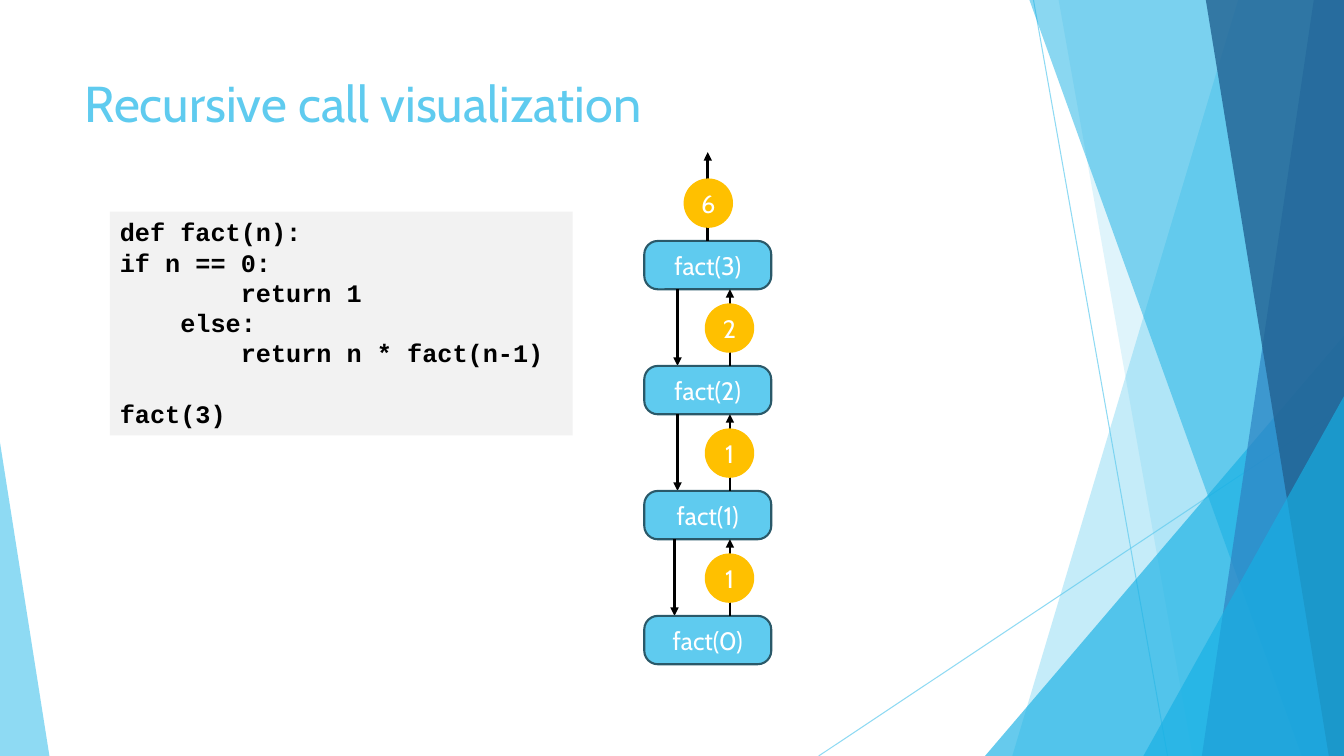
from dataclasses import dataclass

from lxml.etree import SubElement
from pptx import Presentation
from pptx.dml.color import RGBColor
from pptx.enum.shapes import MSO_CONNECTOR, MSO_SHAPE
from pptx.enum.text import MSO_ANCHOR, PP_ALIGN
from pptx.oxml.ns import qn
from pptx.util import Inches, Pt

WIDTH, HEIGHT = 13.33, 7.5
SKY, CYAN, BLUE, NAVY = "5FCBEF", "17B0E4", "2E83C3", "226292"
BLACK, WHITE, GREY, AMBER, EDGE = "000000", "FFFFFF", "F2F2F2", "FFC000", "2A5969"
BOX_X, BOX_Y, BOX_W, BOX_H, STEP = 6.39, 2.39, 1.26, 0.48, 1.24
DISC_Y, DISC_SIZE = 1.77, 0.49
RETURN_X, TOP_ARROW_Y = 7.24, 1.51
CODE_PITCH = Pt(21.6)
CODE = [
    "def fact(n):",
    "if n == 0:",
    "        return 1",
    "    else:",
    "        return n * fact(n-1)",
    "fact(3)",
]


@dataclass
class Band:
    top_x: float
    bottom_x: float
    color: str
    alpha: int


@dataclass
class Wedge:
    x: float
    y: float
    w: float
    apex: float
    color: str
    alpha: int


@dataclass
class Call:
    label: str
    result: str
    disc_x: float
    call_x: float = 0


BACKDROP = [
    Band(12.28, 10.04, SKY, 36),
    Band(10.5, 11.83, SKY, 20),
    Wedge(9.77, 3.33, 3.56, 1, CYAN, 66),
    Band(10.21, 12.91, CYAN, 50),
    Band(13.03, 11.92, BLUE, 70),
    Band(11.96, 13.18, NAVY, 80),
    Wedge(11.34, 3.93, 1.99, 1, CYAN, 66),
    Wedge(0, 4.39, 0.49, 0, SKY, 70),
]
CALLS = [
    Call("fact(3)", "6", 6.78, 6.72),
    Call("fact(2)", "2", 6.99, 6.72),
    Call("fact(1)", "1", 6.99, 6.69),
    Call("fact(0)", "1", 6.99),
]


def rgb(color: str) -> RGBColor:
    return RGBColor.from_string(color)


def set_alpha(sp, alpha: int) -> None:
    clr = next(sp.element.iter(qn("a:srgbClr")))
    SubElement(clr, qn("a:alpha"), val=str(alpha * 1000))


def paint(sp, color: str, edge: str = "") -> None:
    sp.shadow.inherit = False
    sp.fill.solid()
    sp.fill.fore_color.rgb = rgb(color)
    if edge:
        sp.line.color.rgb = rgb(edge)
        sp.line.width = Pt(1.5)
    else:
        sp.line.fill.background()


def style(p, size: int, font: str, color: str, align, bold: bool = False) -> None:
    p.alignment = align
    for r in p.runs:
        r.font.size, r.font.name, r.font.bold = Pt(size), font, bold
        r.font.color.rgb = rgb(color)


def add_shape(s, kind, x: float, y: float, w: float, h: float, color: str, edge: str = ""):
    sp = s.shapes.add_shape(kind, Inches(x), Inches(y), Inches(w), Inches(h))
    paint(sp, color, edge)
    return sp


def add_line(s, x1: float, y1: float, x2: float, y2: float, color: str, width: float):
    line = s.shapes.add_connector(
        MSO_CONNECTOR.STRAIGHT, Inches(x1), Inches(y1), Inches(x2), Inches(y2))
    line.line.color.rgb = rgb(color)
    line.line.width = Pt(width)
    SubElement(line.element.spPr, qn("a:effectLst"))
    return line


def add_arrow(s, x: float, y1: float, y2: float):
    arrow = add_line(s, x, y1, x, y2, BLACK, 2)
    SubElement(arrow.line._get_or_add_ln(), qn("a:tailEnd"), type="triangle")
    return arrow


def add_label(sp, text: str) -> None:
    tf = sp.text_frame
    tf.text = text
    tf.word_wrap = False
    tf.vertical_anchor = MSO_ANCHOR.MIDDLE
    style(tf.paragraphs[0], 18, "Cabin", WHITE, PP_ALIGN.CENTER)


def add_band(s, band: Band) -> None:
    builder = s.shapes.build_freeform(Inches(band.top_x), 0)
    corners = [(WIDTH, 0), (WIDTH, HEIGHT), (band.bottom_x, HEIGHT)]
    builder.add_line_segments([(Inches(x), Inches(y)) for x, y in corners])
    sp = builder.convert_to_shape()
    paint(sp, band.color)
    set_alpha(sp, band.alpha)


def add_wedge(s, wedge: Wedge) -> None:
    sp = add_shape(s, MSO_SHAPE.ISOSCELES_TRIANGLE, wedge.x, wedge.y,
                   wedge.w, HEIGHT - wedge.y, wedge.color)
    sp.adjustments[0] = wedge.apex
    set_alpha(sp, wedge.alpha)


def add_backdrop(s) -> None:
    for x1, y1, x2 in [(10.25, 0, 11.58), (WIDTH, 4.03, 8.12)]:
        set_alpha(add_line(s, x1, y1, x2, HEIGHT, SKY, 0.75), 70)
    for part in BACKDROP:
        if isinstance(part, Band):
            add_band(s, part)
        else:
            add_wedge(s, part)


def add_title(s) -> None:
    title = s.shapes.title
    title.left, title.top = Inches(0.74), Inches(0.67)
    title.width, title.height = Inches(9.4), Inches(1.44)
    tf = title.text_frame
    tf.text = "Recursive call visualization"
    tf.vertical_anchor = MSO_ANCHOR.TOP
    style(tf.paragraphs[0], 36, "Cabin", SKY, PP_ALIGN.LEFT)


def add_code(s) -> None:
    tf = add_shape(s, MSO_SHAPE.RECTANGLE, 1.09, 2.1, 4.59, 2.22, GREY).text_frame
    tf.text = "\n".join(CODE)
    tf.word_wrap = True
    tf.vertical_anchor = MSO_ANCHOR.TOP
    for p in tf.paragraphs:
        p.line_spacing = CODE_PITCH
        style(p, 18, "Courier New", BLACK, PP_ALIGN.LEFT, bold=True)
    tf.paragraphs[-1].space_before = CODE_PITCH


def add_call_stack(s) -> None:
    for i, call in enumerate(CALLS):
        y = BOX_Y + i * STEP
        box = add_shape(s, MSO_SHAPE.ROUNDED_RECTANGLE, BOX_X, y, BOX_W, BOX_H, SKY, EDGE)
        box.adjustments[0] = 0.28
        add_label(box, call.label)
        if i == 0:
            arrow = add_arrow(s, BOX_X + BOX_W / 2, y, TOP_ARROW_Y)
            arrow.begin_connect(box, 0)
        else:
            add_arrow(s, RETURN_X, y, y - STEP + BOX_H)
        if call.call_x:
            add_arrow(s, call.call_x, y + BOX_H, y + STEP)
        disc = add_shape(s, MSO_SHAPE.OVAL, call.disc_x, DISC_Y + i * STEP,
                         DISC_SIZE, DISC_SIZE, AMBER)
        add_label(disc, call.result)


def main() -> None:
    prs = Presentation()
    prs.slide_width, prs.slide_height = Inches(WIDTH), Inches(HEIGHT)
    s = prs.slides.add_slide(prs.slide_layouts[5])
    add_backdrop(s)
    add_title(s)
    add_code(s)
    add_call_stack(s)
    prs.save("out.pptx")


if __name__ == "__main__":
    main()
